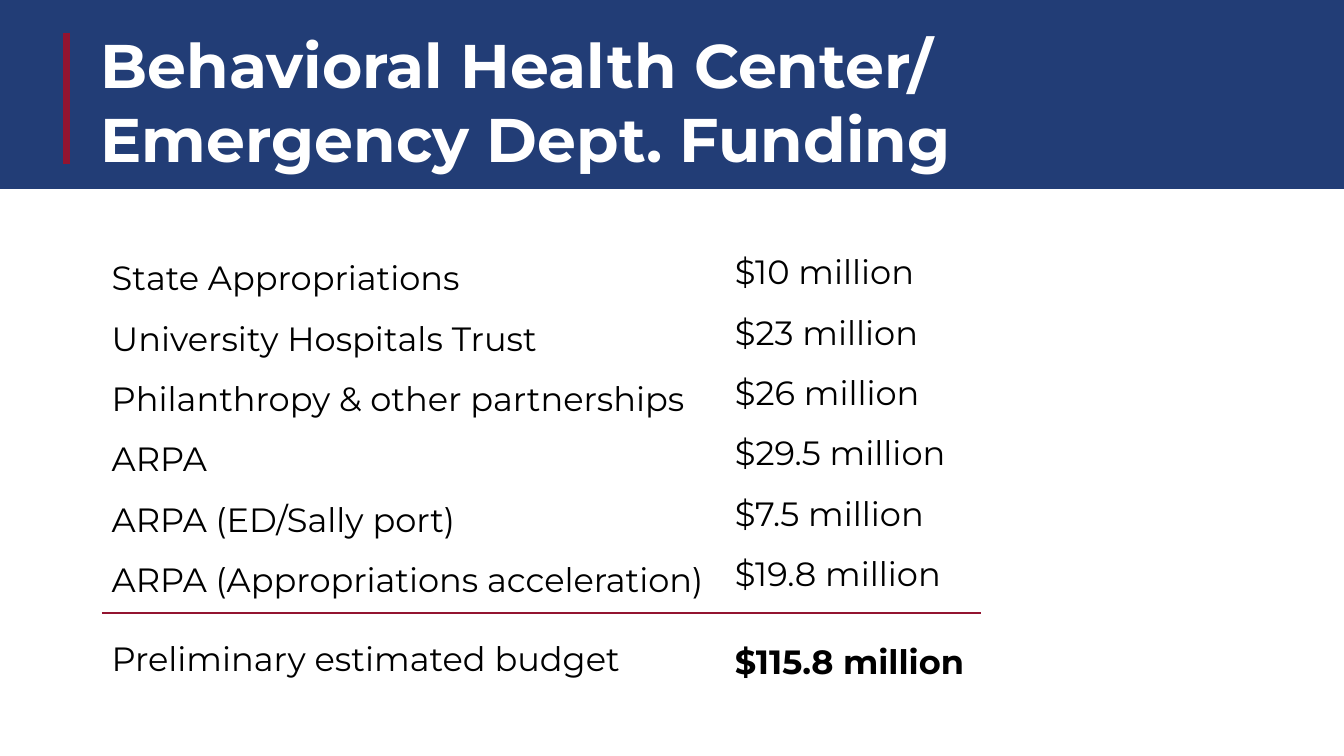
from lxml import etree
from pptx import Presentation
from pptx.dml.color import RGBColor
from pptx.enum.shapes import MSO_CONNECTOR, MSO_SHAPE
from pptx.enum.text import MSO_ANCHOR, MSO_AUTO_SIZE
from pptx.oxml.ns import qn
from pptx.util import Inches, Pt

TITLE = "Behavioral Health Center/\vEmergency Dept. Funding"
FUNDING = [
    ("State Appropriations", "$10 million"),
    ("University Hospitals Trust", "$23 million"),
    ("Philanthropy & other partnerships", "$26 million"),
    ("ARPA", "$29.5 million"),
    ("ARPA (ED/Sally port)", "$7.5 million"),
    ("ARPA (Appropriations acceleration)", "$19.8 million"),
]
TOTAL_LABEL, TOTAL_AMOUNT = "Preliminary estimated budget", "$115.8 million"

NAVY = RGBColor(0x22, 0x3D, 0x76)
CRIMSON = RGBColor(0x93, 0x14, 0x30)
WHITE = RGBColor(0xFF, 0xFF, 0xFF)
BLACK = RGBColor(0, 0, 0)
FONT = "Montserrat"
RECTANGLE = MSO_SHAPE.RECTANGLE
STRAIGHT = MSO_CONNECTOR.STRAIGHT
MIDDLE = MSO_ANCHOR.MIDDLE
GROW = MSO_AUTO_SIZE.SHAPE_TO_FIT_TEXT

WIDTH, HEIGHT = 13.33, 7.5
BAND_HEIGHT = HEIGHT / 4
LABEL_LEFT, AMOUNT_LEFT = 1.01, 7.19
LABEL_WIDTH = 6.41
AMOUNT_WIDTH = 2.78
RULE_TOP, RULE_RIGHT = 6.08, 9.73
TOTAL_HEIGHT = 0.64


def add_text(page, lines, left, top, width, height, size, color, bold=False):
    box = page.shapes.add_textbox(*map(Inches, (left, top, width, height)))
    frame = box.text_frame
    frame.word_wrap = True
    frame.text = "\n".join(lines)
    for para in frame.paragraphs:
        for span in para.runs:
            span.font.name = FONT
            span.font.size = Pt(size)
            span.font.bold = bold
            span.font.color.rgb = color
    return frame


def add_column(page, lines, left, top, width, height, bold=False):
    frame = add_text(page, lines, left, top, width, height, 24, BLACK, bold)
    frame.auto_size = GROW
    for para in frame.paragraphs:
        para.line_spacing = 1.5


def add_rule(page, start_x, start_y, end_x, end_y, weight):
    rule = page.shapes.add_connector(
        STRAIGHT, *map(Inches, (start_x, start_y, end_x, end_y)))
    rule.line.color.rgb = CRIMSON
    rule.line.width = Pt(weight)
    etree.SubElement(rule._element.spPr, qn("a:effectLst"))


def main():
    deck = Presentation()
    deck.slide_width, deck.slide_height = Inches(WIDTH), Inches(HEIGHT)
    page = deck.slides.add_slide(deck.slide_layouts[6])

    band = page.shapes.add_shape(
        RECTANGLE, 0, 0, Inches(WIDTH), Inches(BAND_HEIGHT))
    band.shadow.inherit = False
    band.fill.solid()
    band.fill.fore_color.rgb = NAVY
    band.line.fill.background()

    title = add_text(page, [TITLE], 0.9, 0.37, WIDTH - 0.9, 1.27, 44, WHITE, True)
    title.vertical_anchor = MIDDLE
    title.margin_left = title.margin_right = Inches(0.1)
    title.margin_top = title.margin_bottom = Inches(0.1)
    add_rule(page, 0.66, 0.33, 0.66, 1.63, 5)

    labels, amounts = zip(*FUNDING)
    add_column(page, labels, LABEL_LEFT, 2.3, LABEL_WIDTH, 4.27)
    add_column(page, amounts, AMOUNT_LEFT, 2.24, AMOUNT_WIDTH, 4.18)
    add_rule(page, LABEL_LEFT, RULE_TOP, RULE_RIGHT, RULE_TOP, 1)
    add_column(page, [TOTAL_LABEL], LABEL_LEFT, RULE_TOP, LABEL_WIDTH, TOTAL_HEIGHT)
    add_column(page, [TOTAL_AMOUNT], AMOUNT_LEFT, 6.11,
               WIDTH - AMOUNT_LEFT, TOTAL_HEIGHT, True)

    deck.save("out.pptx")


if __name__ == "__main__":
    main()
